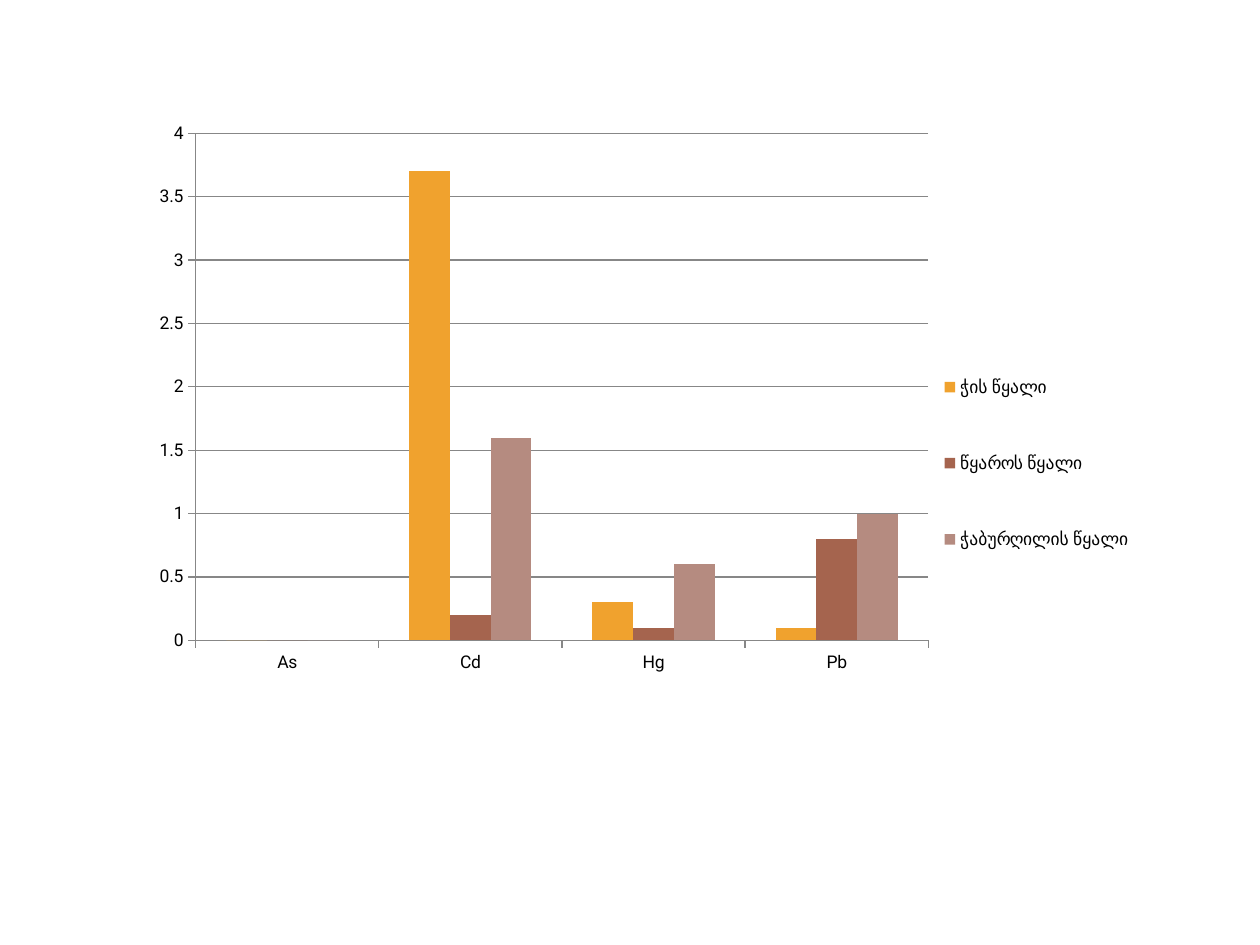
from lxml.etree import SubElement
from pptx import Presentation
from pptx.chart.data import CategoryChartData
from pptx.dml.color import RGBColor
from pptx.enum.chart import XL_CHART_TYPE as ChartType, XL_LEGEND_POSITION as LegendPosition
from pptx.enum.chart import XL_TICK_MARK as TickMark
from pptx.oxml.ns import qn
from pptx.util import Cm, Pt


def color(hex_code):
    return RGBColor.from_string(hex_code)


def set_layout(parent, position, **settings):
    for old in parent.findall(qn("c:layout")):
        parent.remove(old)
    layout = SubElement(parent, qn("c:layout"))
    parent.insert(position, layout)
    manual = SubElement(layout, qn("c:manualLayout"))
    for tag, value in settings.items():
        SubElement(manual, qn(f"c:{tag}")).set("val", str(value))


prs = Presentation()
prs.slide_width, prs.slide_height = Cm(25.4), Cm(19.05)
slide = prs.slides.add_slide(prs.slide_layouts[6])

water_sources = [
    ("ჭის წყალი", "F0A22E", (0, 3.7, 0.3, 0.1)),
    ("წყაროს წყალი", "A5644E", (0, 0.2, 0.1, 0.8)),
    ("ჭაბურღილის წყალი", "B58B80", (0, 1.6, 0.6, 1)),
]
metals = CategoryChartData()
metals.categories = ["As", "Cd", "Hg", "Pb"]
for source, _, levels in water_sources:
    metals.add_series(source, levels)

chart = slide.shapes.add_chart(
    ChartType.COLUMN_CLUSTERED, Cm(2.49), Cm(2.13), Cm(20.8), Cm(14), metals
).chart
chart.has_title = False
chart.font.name = "Roboto"
chart.font.size = Pt(10)
chart.font.color.rgb = color("000000")

columns = chart.plots[0]
columns.vary_by_categories = False
columns.gap_width = 150
columns.overlap = 0
for series, (_, fill, _) in zip(columns.series, water_sources):
    series.format.fill.solid()
    series.format.fill.fore_color.rgb = color(fill)

levels_axis = chart.value_axis
levels_axis.minimum_scale = 0
levels_axis.maximum_scale = 4
levels_axis.major_unit = 0.5
levels_axis.has_major_gridlines = True
levels_axis.tick_labels.number_format = "General"
levels_axis.tick_labels.number_format_is_linked = False
for axis in (chart.category_axis, levels_axis):
    axis.major_tick_mark = TickMark.OUTSIDE
    axis.minor_tick_mark = TickMark.NONE
for line in (chart.category_axis.format.line, levels_axis.format.line,
             levels_axis.major_gridlines.format.line):
    line.color.rgb = color("878787")
    line.width = Pt(0.75)

chart.has_legend = True
chart.legend.position = LegendPosition.RIGHT
chart.legend.include_in_layout = False

plot_area = chart._chartSpace.chart.plotArea
set_layout(plot_area, 0, layoutTarget="inner", xMode="edge", yMode="edge",
           x=0.07, y=0.04, w=0.71, h=0.73)
legend = chart.legend._element
set_layout(legend, 1 if legend.find(qn("c:legendPos")) is not None else 0,
           xMode="edge", yMode="edge", x=0.78, y=0.31, w=0.21, h=0.41)

prs.save("out.pptx")
